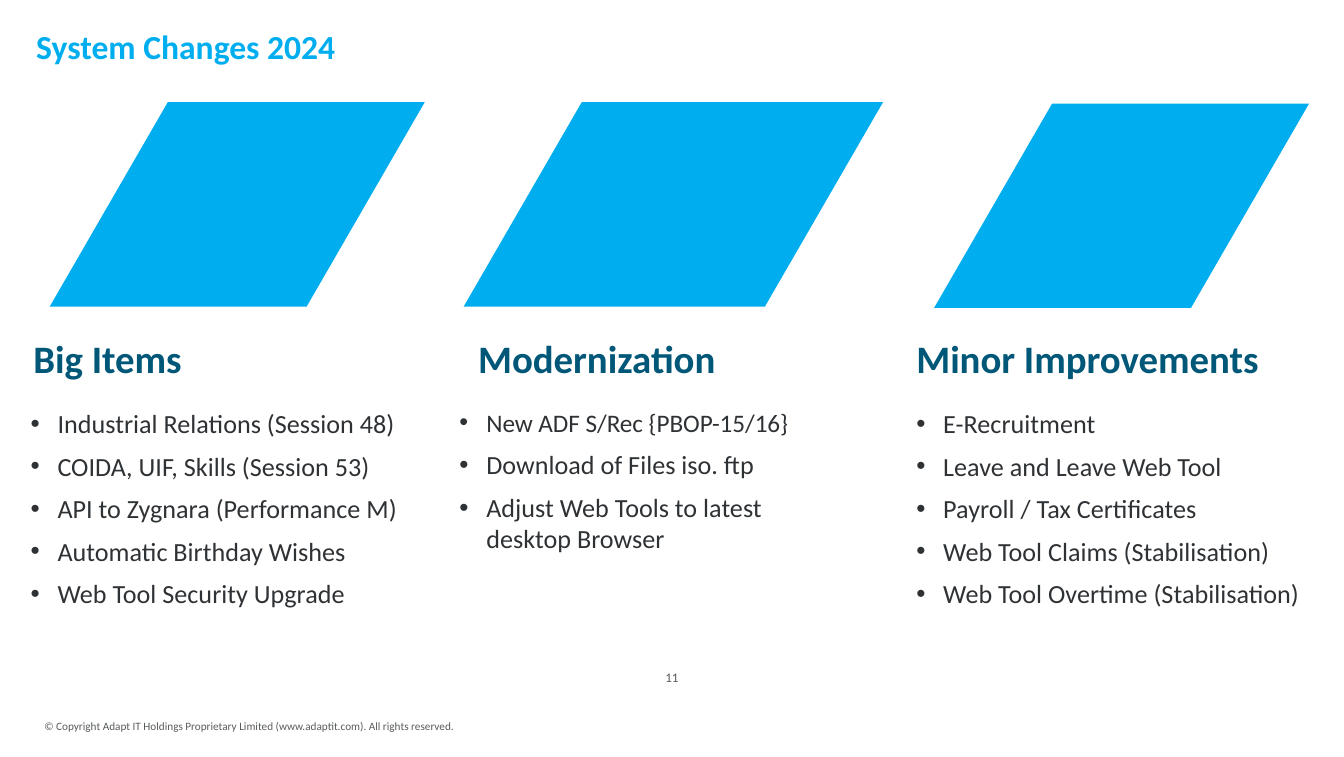
"""Build the System Changes 2024 slide with three columns of planned work."""
from lxml import etree
from pptx import Presentation
from pptx.dml.color import RGBColor
from pptx.enum.shapes import MSO_SHAPE
from pptx.enum.text import MSO_ANCHOR, PP_ALIGN
from pptx.oxml.ns import qn
from pptx.util import Inches, Pt

SKY = RGBColor(0x00, 0xAE, 0xEF)
NAVY = RGBColor(0x00, 0x57, 0x78)
INK = RGBColor(0x2F, 0x32, 0x35)
GREY = RGBColor(0x58, 0x5C, 0x5E)
PARALLELOGRAM = MSO_SHAPE.PARALLELOGRAM
TOP, MIDDLE = MSO_ANCHOR.TOP, MSO_ANCHOR.MIDDLE
LEFT, CENTER = PP_ALIGN.LEFT, PP_ALIGN.CENTER
FONT = "Calibri"


def add_text(page, text, area, size, color, bold=False, align=LEFT,
             anchor=MIDDLE, inset=True, bullet=False, after=0):
    box = page.shapes.add_textbox(*[Inches(length) for length in area])
    frame = box.text_frame
    frame.word_wrap = True
    frame.vertical_anchor = anchor
    if not inset:
        frame.margin_left = frame.margin_right = 0
        frame.margin_top = frame.margin_bottom = 0
    frame.text = text
    for para in frame.paragraphs:
        if bullet:
            properties = para._p.get_or_add_pPr()
            properties.set("marL", str(Inches(0.2)))
            properties.set("indent", str(Inches(-0.2)))
            bullet_font = etree.SubElement(properties, qn("a:buFont"))
            bullet_font.set("typeface", "Arial")
            etree.SubElement(properties, qn("a:buChar")).set("char", "•")
        para.alignment = align
        para.space_after = Pt(after)
        for span in para.runs:
            span.font.name = FONT
            span.font.size = Pt(size)
            span.font.bold = bold
            span.font.color.rgb = color
    return box


deck = Presentation()
deck.slide_width, deck.slide_height = Inches(10), Inches(5.63)
page = deck.slides.add_slide(deck.slide_layouts[6])

add_text(page, "© Copyright Adapt IT Holdings Proprietary Limited (www.adaptit.com). All rights reserved.",
         (0.33, 5.17, 3.45, 0.46), 6, GREY, inset=False)
add_text(page, "11", (4.31, 4.78, 1.38, 0.52), 7, GREY, align=CENTER, inset=False)
add_text(page, "System Changes 2024", (0.27, 0.08, 8.93, 0.53), 18, SKY, bold=True, inset=False)

columns = [
    ("Big Items", (0.15, 2.88), (0.13, 3.03, 1.62), (0.37, 0.76, 2.79),
     ["Industrial Relations (Session 48)", "COIDA, UIF, Skills (Session 53)",
      "API to Zygnara (Performance M)", "Automatic Birthday Wishes",
      "Web Tool Security Upgrade"]),
    ("Modernization", (3.46, 2.47), (3.32, 3.12, 1.2), (3.45, 0.76, 3.12),
     ["New ADF S/Rec {PBOP-15/16}", "Download of Files iso. ftp",
      "Adjust Web Tools to latest desktop Browser"]),
    ("Minor Improvements", (6.72, 2.92), (6.72, 3.16, 2.56), (6.95, 0.77, 2.79),
     ["E-Recruitment", "Leave and Leave Web Tool", "Payroll / Tax Certificates",
      "Web Tool Claims (Stabilisation)", "Web Tool Overtime (Stabilisation)"]),
]
lists = []
for heading, (heading_left, heading_width), (left, width, height), banner_area, items in columns:
    banner_left, banner_top, banner_width = banner_area
    banner = page.shapes.add_shape(PARALLELOGRAM, Inches(banner_left), Inches(banner_top),
                                   Inches(banner_width), Inches(1.52))
    banner.adjustments[0] = 0.578
    banner.fill.solid()
    banner.fill.fore_color.rgb = SKY
    banner.line.fill.background()
    banner.shadow.inherit = False
    add_text(page, heading, (heading_left, 2.44, heading_width, 0.45), 20.8, NAVY,
             bold=True, after=6)
    lists.append(add_text(page, "\n".join(items), (left, 2.98, width, height), 14, INK,
                          anchor=TOP, bullet=True, after=6))

lists[1].text_frame.paragraphs[0].runs[0].font.size = Pt(13.5)

deck.save("out.pptx")
